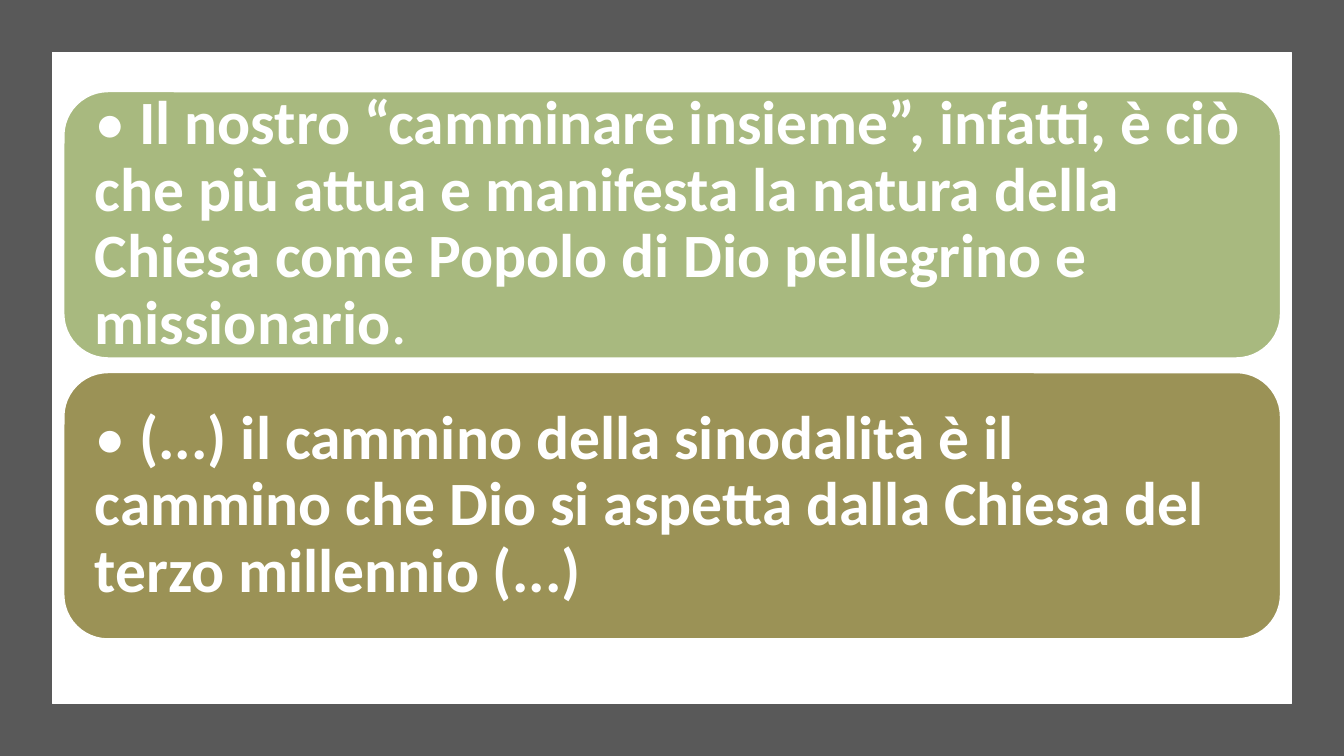
from pptx import Presentation
from pptx.dml.color import RGBColor
from pptx.enum.shapes import MSO_SHAPE as SHAPE
from pptx.enum.text import MSO_ANCHOR as ANCHOR, PP_ALIGN as ALIGN
from pptx.util import Cm, Pt


def color(hex_code):
    return RGBColor.from_string(hex_code)


def add_block(kind, left, top, width, height, fill, line_width=0):
    sp = s.shapes.add_shape(kind, Cm(left), Cm(top), Cm(width), Cm(height))
    sp.shadow.inherit = False
    sp.fill.solid()
    sp.fill.fore_color.rgb = color(fill)
    if line_width:
        sp.line.color.rgb = color("FFFFFF")
        sp.line.width = Pt(line_width)
    else:
        sp.line.fill.background()
    return sp


prs = Presentation()
prs.slide_width, prs.slide_height = Cm(33.87), Cm(19.05)
s = prs.slides.add_slide(prs.slide_layouts[6])

# Grey frame and white panel
add_block(SHAPE.RECTANGLE, 0, 0, 33.87, 19.05, "595959")
add_block(SHAPE.RECTANGLE, 1.32, 1.33, 31.23, 16.4, "FFFFFF", 1)

# Statement cards: fill, then runs as (text, bold)
cards = [
    ("A8B97F", [
        ("• ", False),
        ("Il nostro “camminare insieme”, infatti, è ciò che più attua e manifesta "
         "la natura della Chiesa come Popolo di Dio pellegrino e missionario", True),
        (".", False),
    ]),
    ("9B9256", [
        ("• ", False),
        ("(...) il cammino della sinodalità è il cammino che Dio si aspetta "
         "dalla Chiesa del terzo millennio (...)", True),
    ]),
]
card_top, card_height, card_step = 2.3, 6.73, 7.08

for i, (fill, runs) in enumerate(cards):
    sp = add_block(SHAPE.ROUNDED_RECTANGLE, 1.6, card_top + i * card_step,
                   30.68, card_height, fill, 1.5)
    tf = sp.text_frame
    tf.word_wrap = True
    tf.vertical_anchor = ANCHOR.MIDDLE
    tf.margin_left = tf.margin_right = tf.margin_top = tf.margin_bottom = Cm(0.46)
    p = tf.paragraphs[0]
    p.alignment = ALIGN.LEFT
    p.line_spacing = 0.9
    for text, bold in runs:
        r = p.add_run()
        r.text = text
        r.font.name = "Calibri"
        r.font.size = Pt(44)
        r.font.bold = bold
        r.font.color.rgb = color("FFFFFF")

prs.save("out.pptx")
